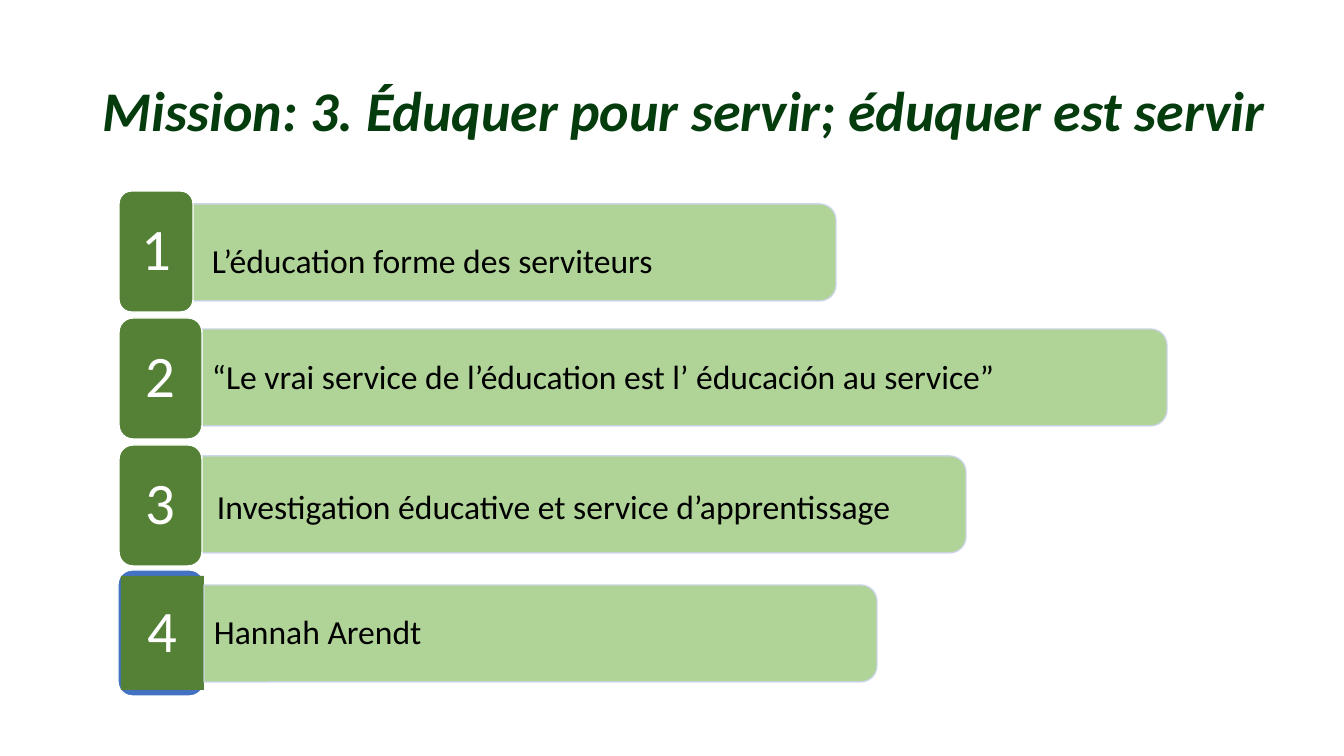
import pptx
import pptx.util
import pptx.dml.color
import pptx.enum.shapes
import pptx.enum.text
from lxml import etree

TITLE = "Mission: 3. Éduquer pour servir; éduquer est servir"
# Per row: wording, bar (left, top, length), text box (left, top, width)
ROWS = [
    ("L’éducation forme des serviteurs", (190, 204, 646), (202, 219, 551)),
    ("“Le vrai service de l’éducation est l’ éducación au service”",
     (202, 329, 965), (202, 335, 960)),
    ("Investigation éducative et service d’apprentissage",
     (195, 456, 771), (207, 465, 732)),
    ("Hannah Arendt", (204, 585, 673), (204, 590, 669)),
]
BADGE_WIDTHS = [74, 83, 83]
BADGE_LEFT, BADGE_TOP, BADGE_PITCH, BADGE_HEIGHT = 119, 191, 127, 121
LAST_FRAME = (118, 570, 86, 126)
LAST_BADGE = (121, 576, 83, 114)
BAR_HEIGHT, TEXT_HEIGHT = 97, 87
CORNER = 0.167
COLORS = {"title": "053C0E", "bar": "A8D08C", "bar_line": "CCD3EA",
          "badge": "548135", "frame": "4372C3", "white": "FFFFFF", "text": "000000"}
SHAPES = pptx.enum.shapes.MSO_SHAPE
ALIGN = pptx.enum.text.PP_ALIGN


def px(*lengths):
    return [pptx.util.Emu(round(length * 914400 / 100.8)) for length in lengths]


def color(name):
    return pptx.dml.color.RGBColor.from_string(COLORS[name])


def write(shape, text, size, color_name, alignment, inset=(10, 5)):
    frame = shape.text_frame
    frame.word_wrap = True
    frame.auto_size = pptx.enum.text.MSO_AUTO_SIZE.NONE
    frame.vertical_anchor = pptx.enum.text.MSO_ANCHOR.MIDDLE
    frame.margin_left, frame.margin_top = px(*inset)
    frame.margin_right, frame.margin_bottom = px(*inset)
    frame.text = text
    paragraph = frame.paragraphs[0]
    paragraph.alignment = alignment
    paragraph.line_spacing = 0.9
    paragraph.font.name = "Calibri"
    paragraph.font.size = pptx.util.Pt(size)
    paragraph.font.color.rgb = color(color_name)
    return paragraph


def add_block(kind, box, fill, line=None):
    shape = slide.shapes.add_shape(kind, *px(*box))
    shape.shadow.inherit = False
    shape.fill.solid()
    shape.fill.fore_color.rgb = color(fill)
    if line:
        shape.line.color.rgb = color(line)
        shape.line.width = pptx.util.Pt(1)
    else:
        shape.line.fill.background()
    if kind == SHAPES.ROUNDED_RECTANGLE:
        shape.adjustments[0] = CORNER
    return shape


def add_bar(left, top, length):
    # The upright shape is turned a quarter, so its round end faces right
    turn = (length - BAR_HEIGHT) / 2
    bar = add_block(SHAPES.ROUND_2_SAME_RECTANGLE,
                    (left + turn, top - turn, BAR_HEIGHT, length), "bar", "bar_line")
    bar.rotation = 90
    bar.adjustments[0], bar.adjustments[1] = CORNER, 0
    # 90 % opacity for fill and line
    for rgb in bar.element.spPr.iter(pptx.oxml.ns.qn("a:srgbClr")):
        etree.SubElement(rgb, pptx.oxml.ns.qn("a:alpha")).set("val", "90000")


def add_badge(index):
    if index < len(BADGE_WIDTHS):
        box = (BADGE_LEFT, BADGE_TOP + index * BADGE_PITCH, BADGE_WIDTHS[index], BADGE_HEIGHT)
        badge = add_block(SHAPES.ROUNDED_RECTANGLE, box, "badge", "white")
    else:
        add_block(SHAPES.ROUNDED_RECTANGLE, LAST_FRAME, "frame", "white")
        badge = add_block(SHAPES.RECTANGLE, LAST_BADGE, "badge")
    write(badge, str(index + 1), 42, "white", ALIGN.CENTER, inset=(17, 9))


presentation = pptx.Presentation()
presentation.slide_width, presentation.slide_height = px(1344, 756)
slide = presentation.slides.add_slide(presentation.slide_layouts[5])

# Title
title = slide.shapes.title
title.left, title.top, title.width, title.height = px(93, 40, 1207, 146)
heading = write(title, TITLE, 40, "title", ALIGN.LEFT)
heading.font.bold = heading.font.italic = True

# Numbered rows; the last badge lies behind its bar
for index, (wording, bar, (left, top, width)) in enumerate(ROWS):
    if index < len(BADGE_WIDTHS):
        add_bar(*bar)
        add_badge(index)
    else:
        add_badge(index)
        add_bar(*bar)
    label = slide.shapes.add_textbox(*px(left, top, width, TEXT_HEIGHT))
    write(label, wording, 24, "text", ALIGN.LEFT)

presentation.save("out.pptx")
